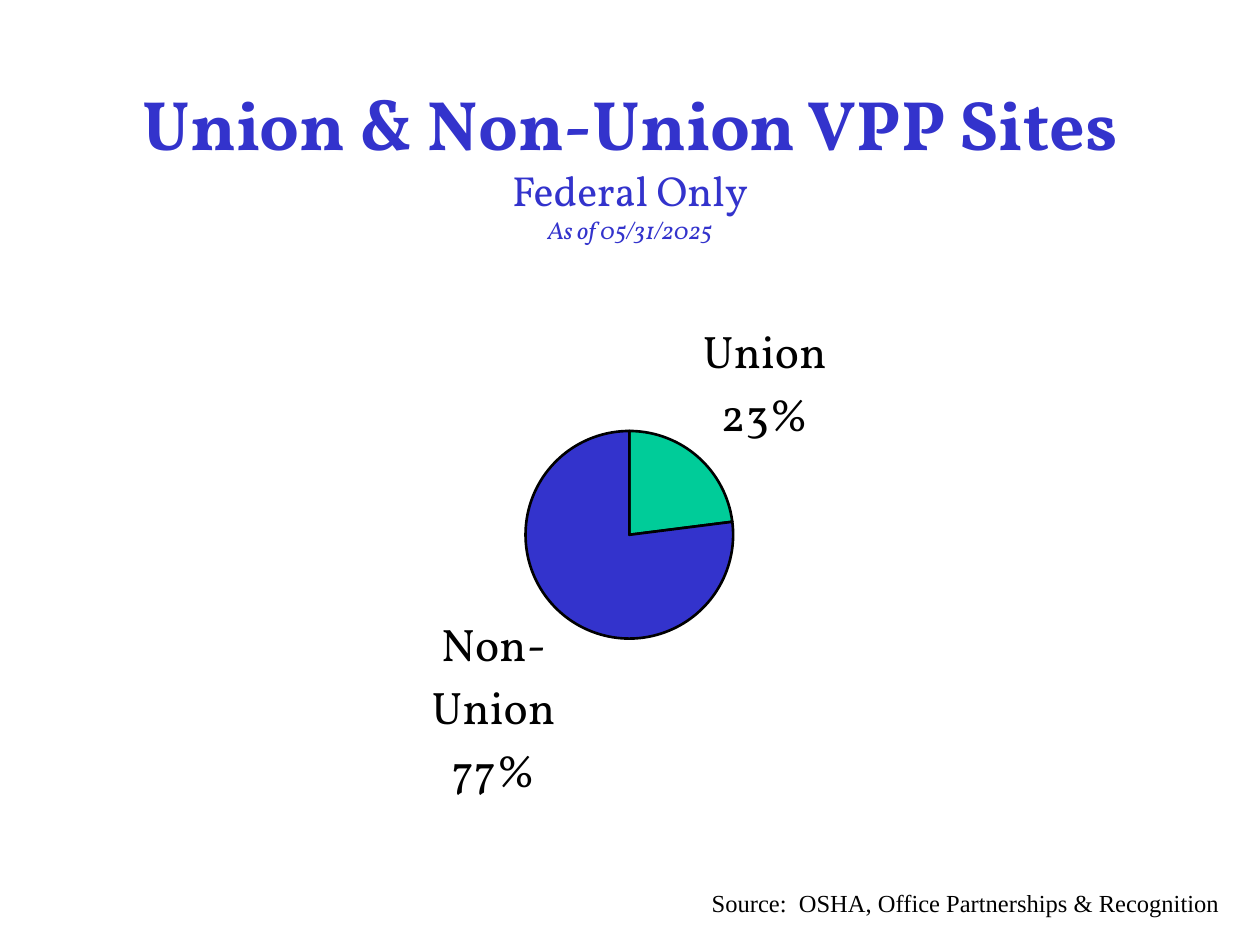
from lxml.etree import SubElement
from pptx import Presentation
from pptx.chart.data import CategoryChartData
from pptx.dml.color import RGBColor
from pptx.enum.chart import XL_CHART_TYPE as ChartType, XL_LABEL_POSITION as LabelPosition
from pptx.enum.text import MSO_ANCHOR as Anchor, PP_ALIGN as Align
from pptx.oxml import parse_xml
from pptx.oxml.ns import nsdecls, qn
from pptx.util import Inches, Pt

BLUE, GREEN, BLACK = "3333CC", "00CC99", "000000"
SERIF, PLAIN = "Vollkorn", "Times New Roman"


def colour(hex_value):
    return RGBColor.from_string(hex_value)


class SlideBuilder:
    def __init__(self, page):
        self.page = page

    def style(self, font, name, size, hex_value):
        font.name, font.size = name, Pt(size)
        font.color.rgb = colour(hex_value)

    def text(self, place, lines, name, hex_value, align, anchor, wrap=True):
        """Each line is (text, size, bold, italic)."""
        box = self.page.shapes.add_textbox(*map(Inches, place))
        frame = box.text_frame
        frame.word_wrap, frame.vertical_anchor = wrap, anchor
        para = frame.paragraphs[0]
        para.alignment = align
        self.style(para.font, name, lines[0][1], hex_value)
        for index, (words, size, bold, italic) in enumerate(lines):
            if index:
                para.add_line_break()
            span = para.add_run()
            span.text = words
            self.style(span.font, name, size, hex_value)
            span.font.bold, span.font.italic = bold, italic

    def pie(self, place, shares, fills, plot_area):
        data = CategoryChartData(number_format="0")
        data.categories = list(shares)
        data.add_series("Series 1", list(shares.values()))
        chart = self.page.shapes.add_chart(
            ChartType.PIE, *map(Inches, place), data).chart
        chart.has_title = chart.has_legend = False
        self.style(chart.font, SERIF, 26, BLACK)
        plot = chart.plots[0]
        plot.vary_by_categories = True

        # Slices
        for index, fill in enumerate(fills):
            slice_format = plot.series[0].points[index].format
            slice_format.fill.solid()
            slice_format.fill.fore_color.rgb = colour(fill)
            slice_format.line.color.rgb = colour(BLACK)
            slice_format.line.width = Pt(1.5)

        # Category and percentage on separate lines
        plot.has_data_labels = True
        labels = plot.data_labels
        labels.show_category_name = labels.show_percentage = True
        labels.show_value = False
        labels.number_format, labels.number_format_is_linked = "0%", False
        labels.position = LabelPosition.OUTSIDE_END
        self.style(labels.font, SERIF, 26, BLACK)
        labels.font.bold = False
        separator = parse_xml(f"<c:separator {nsdecls('c')}>\n</c:separator>")
        plot_xml = chart.element.find(".//" + qn("c:plotArea"))
        plot_xml.find(".//" + qn("c:showBubbleSize")).addnext(separator)

        # Fixed inner plot area
        layout = plot_xml.find(qn("c:layout"))
        if layout is None:
            layout = parse_xml(f"<c:layout {nsdecls('c')}/>")
            plot_xml.insert(0, layout)
        manual = SubElement(layout, qn("c:manualLayout"))
        settings = {"layoutTarget": "inner", "xMode": "edge", "yMode": "edge"}
        settings.update(zip("xywh", plot_area))
        for tag, value in settings.items():
            SubElement(manual, qn("c:" + tag)).set("val", str(value))


def main():
    deck = Presentation()
    deck.slide_width, deck.slide_height = Inches(10), Inches(7.5)
    builder = SlideBuilder(deck.slides.add_slide(deck.slide_layouts[6]))

    # Title
    builder.text((0.75, 0.58, 8.5, 1.42),
                 [("Union & Non-Union VPP Sites", 40, True, False),
                  ("Federal Only", 24, False, False),
                  ("As of 05/31/2025", 14, False, True)],
                 SERIF, BLUE, Align.CENTER, Anchor.MIDDLE)

    # Share of sites
    builder.pie((1.99, 1.67, 6.01, 5.15), {"Union": 23, "Non-Union": 77},
                (GREEN, BLUE), (0.31, 0.34, 0.38, 0.32))

    # Source note
    builder.text((5.55, 6.83, 4.31, 0.5),
                 [("Source:  OSHA, Office Partnerships & Recognition", 14, False, False)],
                 PLAIN, BLACK, Align.LEFT, Anchor.BOTTOM, wrap=False)

    deck.save("out.pptx")


if __name__ == "__main__":
    main()
